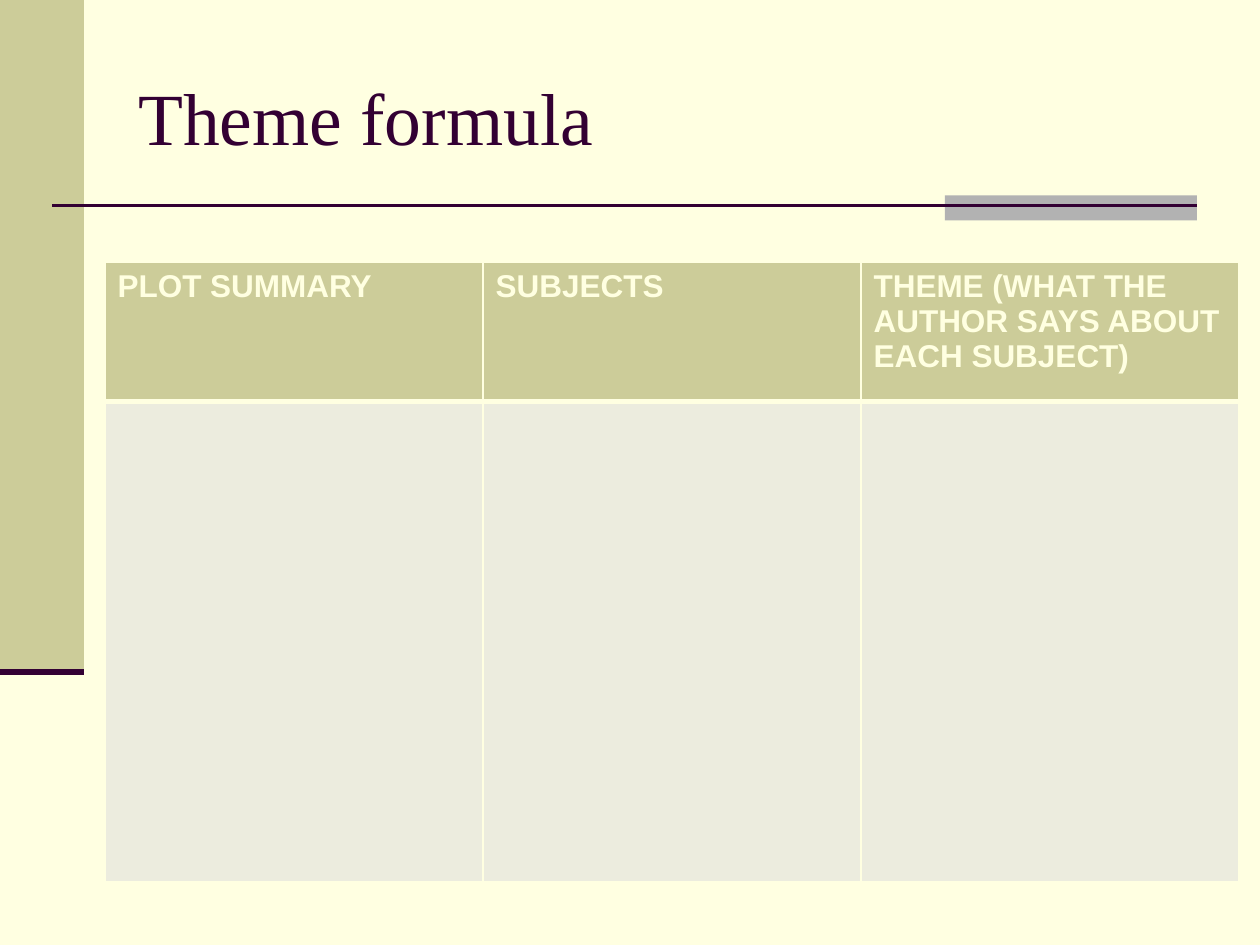
from dataclasses import dataclass

from lxml import etree
from pptx import Presentation
from pptx.dml.color import RGBColor
from pptx.enum.shapes import MSO_CONNECTOR, MSO_SHAPE
from pptx.enum.text import MSO_ANCHOR
from pptx.oxml.ns import qn
from pptx.util import Pt

RECTANGLE = MSO_SHAPE.RECTANGLE
STRAIGHT = MSO_CONNECTOR.STRAIGHT
MIDDLE = MSO_ANCHOR.MIDDLE


@dataclass(frozen=True)
class Theme:
    background: str = "FFFFE1"
    accent: str = "CCCC99"
    ink: str = "330033"
    grey: str = "B2B2B2"
    body_fill: str = "ECECDE"
    title_font: str = "Times New Roman"
    table_font: str = "Arial"
    title_size: float = 42
    table_size: float = 18
    thin_border: float = 1
    header_border: float = 3


@dataclass(frozen=True)
class Block:
    left: float
    top: float
    width: float
    height: float
    color: str


@dataclass(frozen=True)
class Rule:
    left: float
    right: float
    y: float
    weight: float


THEME = Theme()
BLOCKS = [
    Block(0, 0, 48, 384, THEME.accent),
    Block(540, 111.6, 144, 14.4, THEME.grey),
]
RULES = [Rule(30, 684, 117.5, 1.5), Rule(0, 48, 384, 3.5)]
HEADINGS = [
    "PLOT SUMMARY",
    "SUBJECTS",
    "THEME (WHAT THE AUTHOR SAYS ABOUT EACH SUBJECT)",
]
COLUMN_WIDTH = 216
ROW_HEIGHTS = [79.5, 274.5]


def rgb(color: str) -> RGBColor:
    return RGBColor.from_string(color)


def style_run(r, font: str, size: float, color: str, bold: bool = False) -> None:
    r.font.name = font
    r.font.size = Pt(size)
    r.font.color.rgb = rgb(color)
    r.font.bold = bold


def add_block(s, block: Block) -> None:
    sp = s.shapes.add_shape(RECTANGLE, Pt(block.left), Pt(block.top),
                            Pt(block.width), Pt(block.height))
    sp.shadow.inherit = False
    sp.fill.solid()
    sp.fill.fore_color.rgb = rgb(block.color)
    sp.line.fill.background()


def add_rule(s, rule: Rule) -> None:
    line = s.shapes.add_connector(STRAIGHT, Pt(rule.left), Pt(rule.y),
                                  Pt(rule.right), Pt(rule.y))
    line.line.color.rgb = rgb(THEME.ink)
    line.line.width = Pt(rule.weight)
    etree.SubElement(line._element.spPr, qn("a:effectLst"))


def add_title(s, text: str) -> None:
    sp = s.shapes.add_textbox(Pt(72), Pt(21.6), Pt(612), Pt(90))
    tf = sp.text_frame
    tf.word_wrap = True
    tf.vertical_anchor = MIDDLE
    tf.text = text
    style_run(tf.paragraphs[0].runs[0], THEME.title_font, THEME.title_size, THEME.ink)


def set_borders(cell, top: float, bottom: float) -> None:
    """Draw all four cell borders; the side borders are thin."""
    tc_pr = cell._tc.get_or_add_tcPr()
    weights = {"lnL": THEME.thin_border, "lnR": THEME.thin_border,
               "lnT": top, "lnB": bottom}
    for index, (side, weight) in enumerate(weights.items()):
        ln = etree.Element(qn(f"a:{side}"), w=str(Pt(weight)))
        fill = etree.SubElement(ln, qn("a:solidFill"))
        etree.SubElement(fill, qn("a:srgbClr"), val=THEME.background)
        tc_pr.insert(index, ln)


def fill_cell(cell, color: str) -> None:
    cell.fill.solid()
    cell.fill.fore_color.rgb = rgb(color)


def add_theme_table(s) -> None:
    frame = s.shapes.add_table(len(ROW_HEIGHTS), len(HEADINGS), Pt(60), Pt(150),
                               Pt(COLUMN_WIDTH * len(HEADINGS)), Pt(sum(ROW_HEIGHTS)))
    table = frame.table
    for row, height in zip(table.rows, ROW_HEIGHTS):
        row.height = Pt(height)
    for i, heading in enumerate(HEADINGS):
        table.columns[i].width = Pt(COLUMN_WIDTH)
        header, body = table.cell(0, i), table.cell(1, i)
        header.text = heading
        style_run(header.text_frame.paragraphs[0].runs[0], THEME.table_font,
                  THEME.table_size, THEME.background, bold=True)
        fill_cell(header, THEME.accent)
        fill_cell(body, THEME.body_fill)
        set_borders(header, THEME.thin_border, THEME.header_border)
        set_borders(body, THEME.header_border, THEME.thin_border)


def main() -> None:
    prs = Presentation()
    prs.slide_width, prs.slide_height = Pt(720), Pt(540)
    s = prs.slides.add_slide(prs.slide_layouts[6])
    s.background.fill.solid()
    s.background.fill.fore_color.rgb = rgb(THEME.background)
    for block in BLOCKS:
        add_block(s, block)
    for rule in RULES:
        add_rule(s, rule)
    add_title(s, "Theme formula")
    add_theme_table(s)
    prs.save("out.pptx")


if __name__ == "__main__":
    main()
